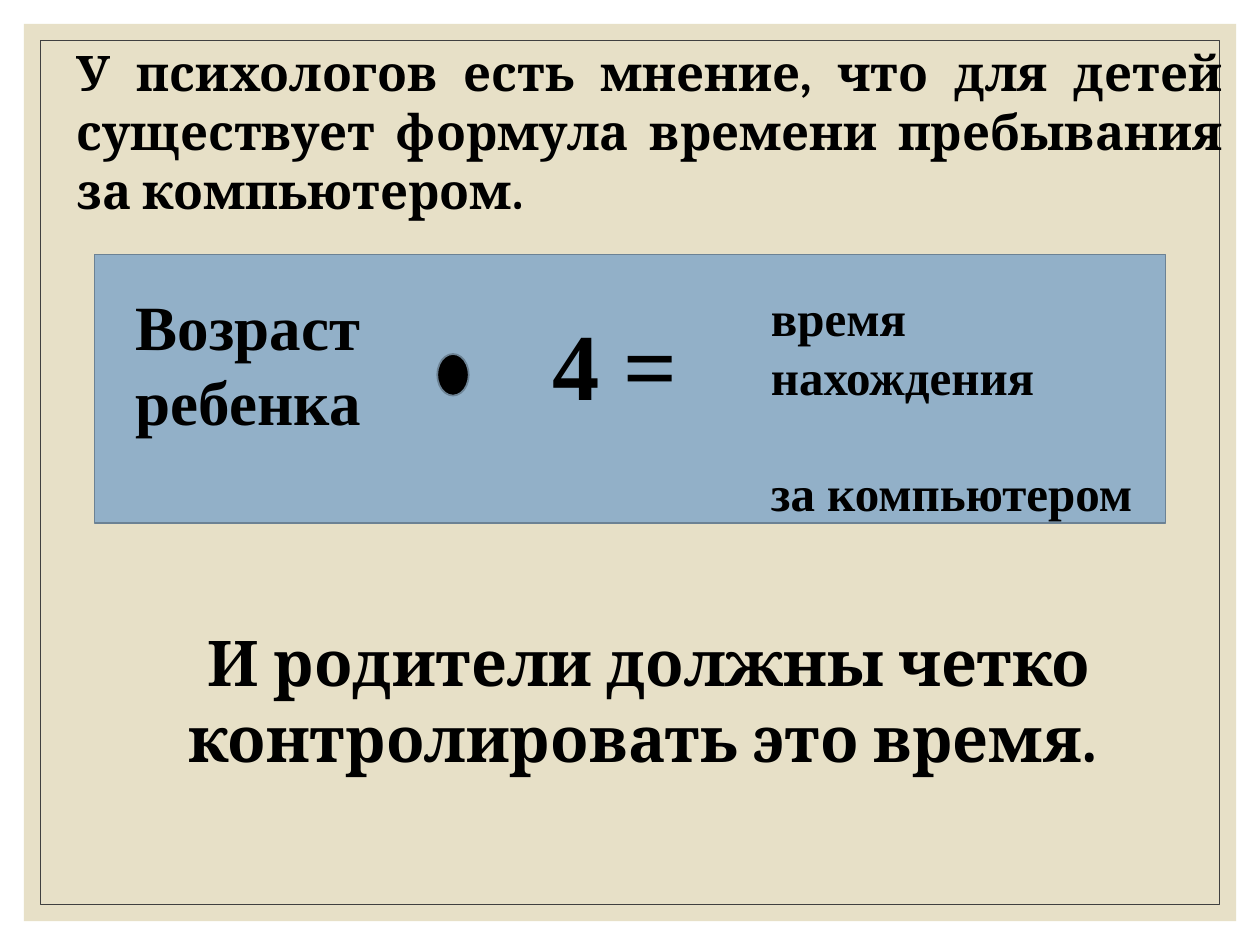
"""Build a slide with a formula for children's computer time."""
from lxml import etree
from pptx import Presentation
from pptx import util as u
from pptx.dml.color import RGBColor
from pptx.enum import shapes, text
from pptx.oxml.ns import qn

SAND = RGBColor(0xE7, 0xE0, 0xC7)
GRAY = RGBColor(0x40, 0x40, 0x40)
BLUE = RGBColor(0x92, 0xB0, 0xC8)
EDGE = RGBColor(0x6C, 0x82, 0x94)
BLACK = RGBColor(0, 0, 0)
KIND = shapes.MSO_SHAPE
ALIGN = text.PP_ALIGN


def write(par, words, size, font="Times New Roman", align=ALIGN.LEFT, before=0):
    par.alignment = align
    par.space_before = u.Pt(before)
    run = par.add_run()
    run.text = words
    run.font.name = font
    run.font.size = u.Pt(size)
    run.font.bold = True
    run.font.color.rgb = BLACK


deck = Presentation()
deck.slide_width, deck.slide_height = u.Inches(10), u.Inches(7.5)
slide = deck.slides.add_slide(deck.slide_layouts[1])
title, body = slide.placeholders
title._element.getparent().remove(title._element)

for kind, area, fill, line, width in [
    (KIND.RECTANGLE, (0.19, 0.19, 9.62, 7.12), SAND, None, 0),
    (KIND.RECTANGLE, (0.32, 0.32, 9.36, 6.86), None, GRAY, 0.5),
    (KIND.RECTANGLE, (0.75, 2.02, 8.5, 2.13), BLUE, EDGE, 1),
    (KIND.FLOWCHART_CONNECTOR, (3.47, 2.81, 0.25, 0.33), BLACK, EDGE, 1),
]:
    shape = slide.shapes.add_shape(kind, *map(u.Inches, area))
    shape.shadow.inherit = False
    if fill is None:
        shape.fill.background()
    else:
        shape.fill.solid()
        shape.fill.fore_color.rgb = fill
    if line is None:
        shape.line.fill.background()
    else:
        shape.line.color.rgb = line
        shape.line.width = u.Pt(width)

slide.shapes._spTree.append(body._element)
body.left, body.top, body.width, body.height = map(u.Inches, (0.51, 0.29, 9.29, 3.54))
frame = body.text_frame
frame.auto_size = text.MSO_AUTO_SIZE.NONE
for par, words, size, align, before in [
    (frame.paragraphs[0], "У психологов есть мнение, что для детей существует "
     "формула времени пребывания за компьютером. ", 28, ALIGN.JUSTIFY, 9),
    (frame.add_paragraph(), "И родители должны четко контролировать это время. ",
     36, ALIGN.CENTER, 231),
]:
    write(par, words, size, "Cambria", align, before)
    props = par._p.get_or_add_pPr()
    props.set("marL", "0")
    props.set("indent", "0")
    etree.SubElement(props, qn("a:buNone"))

for area, size, parts in [
    ((0.98, 2.23, 2.21, 1.31), 36, ["Возраст ребенка"]),
    ((4.29, 2.38, 1.5, 1.01), 54, ["4 ="]),
    ((6.02, 2.23, 3.23, 1.51), 28, ["время нахождения", "за компьютером"]),
]:
    frame = slide.shapes.add_textbox(*map(u.Inches, area)).text_frame
    frame.word_wrap = True
    frame.auto_size = text.MSO_AUTO_SIZE.SHAPE_TO_FIT_TEXT
    write(frame.paragraphs[0], parts[0], size)
    for words in parts[1:]:
        write(frame.add_paragraph(), words, size, before=33)

deck.save("out.pptx")
